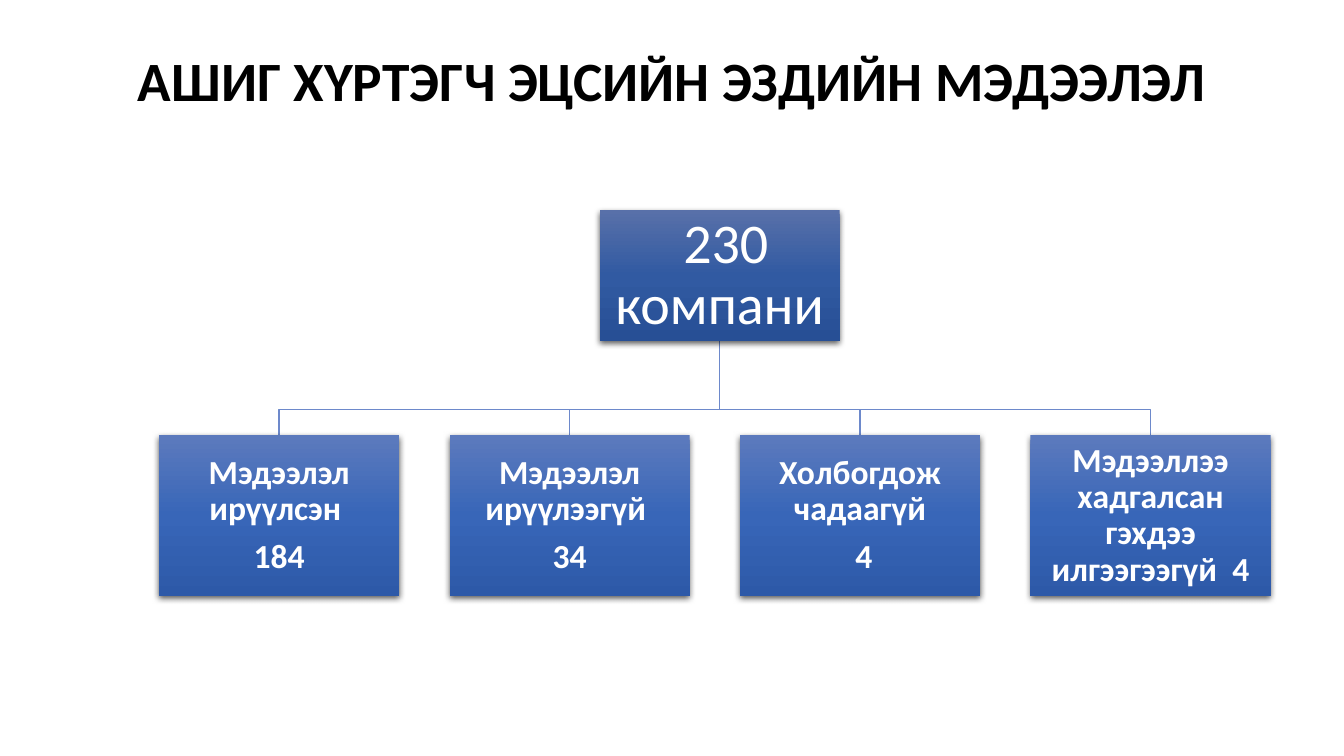
from copy import deepcopy

from lxml import etree
from pptx import Presentation
from pptx import util as u
from pptx.dml.color import RGBColor
from pptx.enum import shapes, text
from pptx.oxml import ns

BLACK = RGBColor(0x00, 0x00, 0x00)
WHITE = RGBColor(0xFF, 0xFF, 0xFF)
LINK = RGBColor(0x6D, 0x89, 0xCB)
DARK = [RGBColor(0x58, 0x70, 0xA9), RGBColor(0x31, 0x5A, 0xA2), RGBColor(0x27, 0x4F, 0x95)]
BLUE = [RGBColor(0x5C, 0x7A, 0xBD), RGBColor(0x38, 0x66, 0xB8), RGBColor(0x2D, 0x59, 0xA8)]

WIDE = 6.05
ROOT_X, ROOT_Y, ROOT_H = 15.11, 5.3, 3.3
LEAF_X, LEAF_Y, LEAF_H, STEP = 4.01, 10.97, 4.06, 7.32
BUS_Y = 10.32
LEAVES = [
    ["Мэдээлэл ирүүлсэн ", "184"],
    ["Мэдээлэл ирүүлээгүй ", "34"],
    ["Холбогдож чадаагүй", " 4"],
    ["Мэдээллээ хадгалсан гэхдээ илгээгээгүй  4"],
]


class Chart:
    font = "Calibri"

    def __init__(self, deck):
        self.slide = deck.slides.add_slide(deck.slide_layouts[5])

    def label(self, frame, lines, size, color, bold, after=0):
        frame.word_wrap = True
        frame.auto_size = text.MSO_AUTO_SIZE.NONE
        frame.vertical_anchor = text.MSO_ANCHOR.MIDDLE
        for i, line in enumerate(lines):
            para = frame.add_paragraph() if i else frame.paragraphs[0]
            para.alignment = text.PP_ALIGN.CENTER
            para.line_spacing = 0.9
            para.space_after = u.Pt(after)
            run = para.add_run()
            run.text = line
            run.font.name = self.font
            run.font.size = u.Pt(size)
            run.font.bold = bold
            run.font.color.rgb = color

    def title(self, line):
        head = self.slide.shapes.title
        head.left, head.top = u.Cm(2.33), u.Cm(1.02)
        head.width, head.height = u.Cm(29.21), u.Cm(2.18)
        self.label(head.text_frame, [line], 39.6, BLACK, True)

    def link(self, *points):
        spots = [(u.Cm(x), u.Cm(y)) for x, y in points]
        form = self.slide.shapes.build_freeform(*spots[0])
        form.add_line_segments(spots[1:], close=False)
        elbow = form.convert_to_shape()
        elbow.fill.background()
        elbow.line.color.rgb = LINK
        elbow.line.width = u.Pt(1)
        elbow.shadow.inherit = False

    def shade(self, box, tones):
        box.fill.gradient()
        box.fill.gradient_angle = 270
        stops = box._element.spPr.find(".//" + ns.qn("a:gsLst"))
        stops.insert(1, deepcopy(stops[0]))
        for stop, tone, place in zip(box.fill.gradient_stops, tones, (0, 0.5, 1)):
            stop.color.rgb = tone
            stop.position = place

    def shadow(self, box):
        box.shadow.inherit = False
        group = box._element.spPr.find(ns.qn("a:effectLst"))
        outer = etree.SubElement(group, ns.qn("a:outerShdw"), blurRad="57150",
                                 dist="19050", dir="5400000", algn="ctr", rotWithShape="0")
        color = etree.SubElement(outer, ns.qn("a:srgbClr"), val="000000")
        etree.SubElement(color, ns.qn("a:alpha"), val="63000")

    def box(self, x, y, high, tones, lines, size, bold, inset):
        box = self.slide.shapes.add_shape(
            shapes.MSO_SHAPE.RECTANGLE, u.Cm(x), u.Cm(y), u.Cm(WIDE), u.Cm(high))
        self.shade(box, tones)
        box.line.fill.background()
        self.shadow(box)
        frame = box.text_frame
        frame.margin_left = frame.margin_right = u.Cm(inset)
        frame.margin_top = frame.margin_bottom = u.Cm(inset)
        self.label(frame, lines, size, WHITE, bold, after=size * 0.35)


def main():
    deck = Presentation()
    deck.slide_width, deck.slide_height = u.Cm(33.87), u.Cm(19.05)
    chart = Chart(deck)
    chart.title("АШИГ ХҮРТЭГЧ ЭЦСИЙН ЭЗДИЙН МЭДЭЭЛЭЛ")
    stem = ROOT_X + WIDE / 2
    lefts = [LEAF_X + i * STEP for i in range(len(LEAVES))]
    for left in reversed(lefts):
        mid = left + WIDE / 2
        chart.link((stem, ROOT_Y + ROOT_H), (stem, BUS_Y), (mid, BUS_Y), (mid, LEAF_Y))
    chart.box(ROOT_X, ROOT_Y, ROOT_H, DARK, [" 230 компани"], 40, False, 0.07)
    for left, lines in zip(lefts, LEAVES):
        chart.box(left, LEAF_Y, LEAF_H, BLUE, lines, 24, True, 0.04)
    deck.save("out.pptx")


if __name__ == "__main__":
    main()
